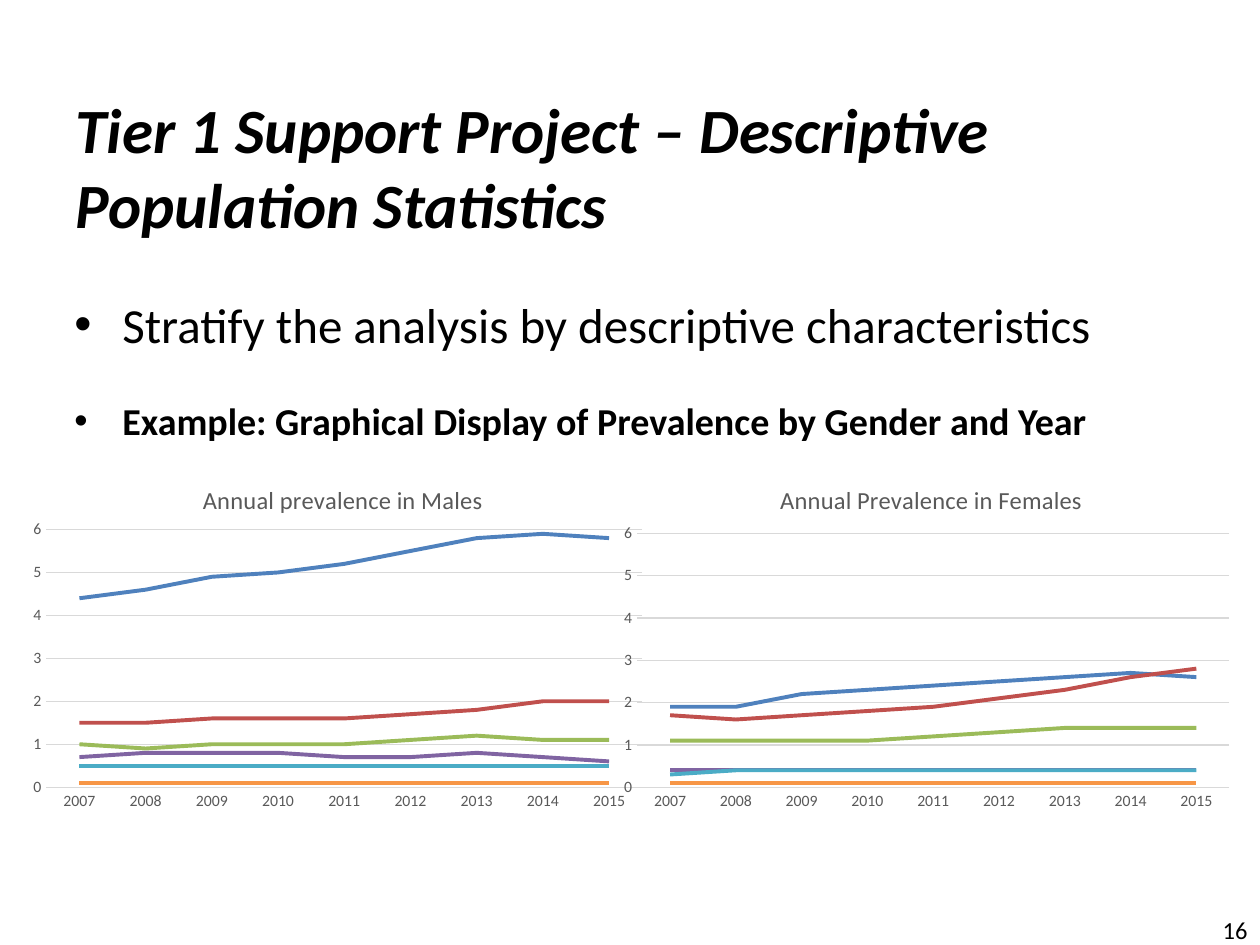
from dataclasses import dataclass

from lxml import etree
from pptx import Presentation
from pptx.chart.data import CategoryChartData
from pptx.dml.color import RGBColor
from pptx.enum.chart import XL_CHART_TYPE, XL_MARKER_STYLE, XL_TICK_MARK
from pptx.enum.text import MSO_ANCHOR, PP_ALIGN
from pptx.oxml.ns import qn
from pptx.util import Emu, Inches, Pt

LINE_CHART = XL_CHART_TYPE.LINE
NO_MARKER = XL_MARKER_STYLE.NONE
NO_TICK = XL_TICK_MARK.NONE
MIDDLE = MSO_ANCHOR.MIDDLE
TOP = MSO_ANCHOR.TOP
LEFT = PP_ALIGN.LEFT
RIGHT = PP_ALIGN.RIGHT

BLACK = RGBColor(0x00, 0x00, 0x00)
GRAY = RGBColor(0x59, 0x59, 0x59)
GRID = RGBColor(0xD9, 0xD9, 0xD9)
SERIES_COLORS = (
    RGBColor(0x4F, 0x81, 0xBD),
    RGBColor(0xC0, 0x50, 0x4D),
    RGBColor(0x9B, 0xBB, 0x59),
    RGBColor(0x80, 0x64, 0xA2),
    RGBColor(0x4B, 0xAC, 0xC6),
    RGBColor(0xF7, 0x96, 0x46),
)
FONT = "Calibri"
YEARS = [str(year) for year in range(2007, 2016)]
PX_PER_INCH = 126


@dataclass(frozen=True)
class Box:
    left: int
    top: int
    width: int
    height: int

    def emu(self) -> tuple:
        return tuple(px(n) for n in (self.left, self.top, self.width, self.height))


@dataclass(frozen=True)
class Bullet:
    text: str
    box: Box
    size: float
    bold: bool


@dataclass(frozen=True)
class PrevalenceChart:
    title: str
    box: Box
    title_at: dict
    plot_at: dict
    rates: tuple


BULLETS = (
    Bullet("Example: Graphical Display of Prevalence by Gender and Year",
           Box(62, 391, 1134, 83), 21.7, True),
    Bullet("Stratify the analysis by descriptive characteristics",
           Box(62, 288, 1134, 83), 28, False),
)

CHARTS = (
    PrevalenceChart(
        "Annual prevalence in Males", Box(21, 457, 634, 363),
        {"x": 0.28, "y": 0.06}, {"x": 0.04, "y": 0.2, "w": 0.94, "h": 0.71},
        (
            (4.4, 4.6, 4.9, 5, 5.2, 5.5, 5.8, 5.9, 5.8),
            (1.5, 1.5, 1.6, 1.6, 1.6, 1.7, 1.8, 2, 2),
            (1, 0.9, 1, 1, 1, 1.1, 1.2, 1.1, 1.1),
            (0.7, 0.8, 0.8, 0.8, 0.7, 0.7, 0.8, 0.7, 0.6),
            (0.5,) * 9,
            (0.1,) * 9,
        ),
    ),
    PrevalenceChart(
        "Annual Prevalence in Females", Box(612, 457, 630, 363),
        {"x": 0.26, "y": 0.06}, {"x": 0.04, "y": 0.21, "w": 0.94, "h": 0.7},
        (
            (1.9, 1.9, 2.2, 2.3, 2.4, 2.5, 2.6, 2.7, 2.6),
            (1.7, 1.6, 1.7, 1.8, 1.9, 2.1, 2.3, 2.6, 2.8),
            (1.1, 1.1, 1.1, 1.1, 1.2, 1.3, 1.4, 1.4, 1.4),
            (0.4,) * 9,
            (0.3,) + (0.4,) * 8,
            (0.1,) * 9,
        ),
    ),
)


def px(length: int) -> Emu:
    return Emu(round(length * Inches(1) / PX_PER_INCH))


def style_font(font, size: float, color: RGBColor, bold: bool = False) -> None:
    font.name = FONT
    font.size = Pt(size)
    font.bold = bold
    font.color.rgb = color


def fill_frame(shape, text: str, size: float, bold: bool, anchor, align):
    frame = shape.text_frame
    frame.word_wrap = True
    frame.vertical_anchor = anchor
    frame.text = text
    paragraph = frame.paragraphs[0]
    paragraph.alignment = align
    style_font(paragraph.runs[0].font, size, BLACK, bold)
    return paragraph


def add_bullet(slide, bullet: Bullet) -> None:
    shape = slide.shapes.add_textbox(*bullet.box.emu())
    paragraph = fill_frame(shape, bullet.text, bullet.size, bullet.bold, TOP, LEFT)
    properties = paragraph._p.get_or_add_pPr()
    properties.set("marL", str(px(48)))
    properties.set("indent", str(-px(48)))
    etree.SubElement(properties, qn("a:buFont")).set("typeface", "Arial")
    etree.SubElement(properties, qn("a:buChar")).set("char", "•")


def set_layout(parent, index: int, place: dict, inner: bool = False) -> None:
    for old_layout in parent.findall(qn("c:layout")):
        parent.remove(old_layout)
    layout = etree.Element(qn("c:layout"))
    manual = etree.SubElement(layout, qn("c:manualLayout"))
    settings = {"layoutTarget": "inner"} if inner else {}
    settings |= {"xMode": "edge", "yMode": "edge"} | place
    for tag, value in settings.items():
        etree.SubElement(manual, qn(f"c:{tag}")).set("val", str(value))
    parent.insert(index, layout)


def no_fill():
    properties = etree.Element(qn("c:spPr"))
    etree.SubElement(properties, qn("a:noFill"))
    outline = etree.SubElement(properties, qn("a:ln"))
    etree.SubElement(outline, qn("a:noFill"))
    return properties


def style_axis(axis) -> None:
    axis.major_tick_mark = NO_TICK
    axis.minor_tick_mark = NO_TICK
    style_font(axis.tick_labels.font, 9, GRAY)


def style_line(line, color: RGBColor, width: float) -> None:
    line.color.rgb = color
    line.width = Pt(width)


def add_prevalence_chart(slide, prevalence: PrevalenceChart) -> None:
    data = CategoryChartData()
    data.categories = YEARS
    for number, rates in enumerate(prevalence.rates, 1):
        data.add_series(f"Series {number}", rates)
    chart = slide.shapes.add_chart(LINE_CHART, *prevalence.box.emu(), data).chart
    style_font(chart.font, 10, BLACK)
    chart.has_legend = False
    chart.has_title = True
    heading = chart.chart_title
    heading.text_frame.text = prevalence.title
    style_font(heading.text_frame.paragraphs[0].runs[0].font, 14, GRAY)
    set_layout(heading._element, 1, prevalence.title_at)

    style_axis(chart.category_axis)
    style_line(chart.category_axis.format.line, GRID, 0.75)
    scale = chart.value_axis
    style_axis(scale)
    scale.minimum_scale, scale.maximum_scale, scale.major_unit = 0, 6, 1
    scale.format.line.fill.background()
    style_line(scale.major_gridlines.format.line, GRID, 0.75)

    plot = chart.plots[0]
    plot.vary_by_categories = False
    for series, color in zip(plot.series, SERIES_COLORS):
        series.smooth = False
        series.marker.style = NO_MARKER
        style_line(series.format.line, color, 2.25)

    chart_part = chart._chartSpace.find(qn("c:chart"))
    plot_area = chart_part.find(qn("c:plotArea"))
    set_layout(plot_area, 0, prevalence.plot_at, inner=True)
    plot_area.append(no_fill())
    chart_part.addnext(no_fill())


def main() -> None:
    deck = Presentation()
    deck.slide_width, deck.slide_height = px(1260), px(945)
    slide = deck.slides.add_slide(deck.slide_layouts[5])
    title = slide.shapes.title
    title.left, title.top, title.width, title.height = Box(63, 82, 1149, 168).emu()
    heading = fill_frame(title, "Tier 1 Support Project – Descriptive Population Statistics",
                         36, True, MIDDLE, LEFT)
    heading.runs[0].font.italic = True
    page_number = slide.shapes.add_textbox(*Box(976, 905, 284, 50).emu())
    fill_frame(page_number, "16", 14, False, MIDDLE, RIGHT)
    for prevalence in CHARTS:
        add_prevalence_chart(slide, prevalence)
    for bullet in BULLETS:
        add_bullet(slide, bullet)
    deck.save("out.pptx")


if __name__ == "__main__":
    main()
